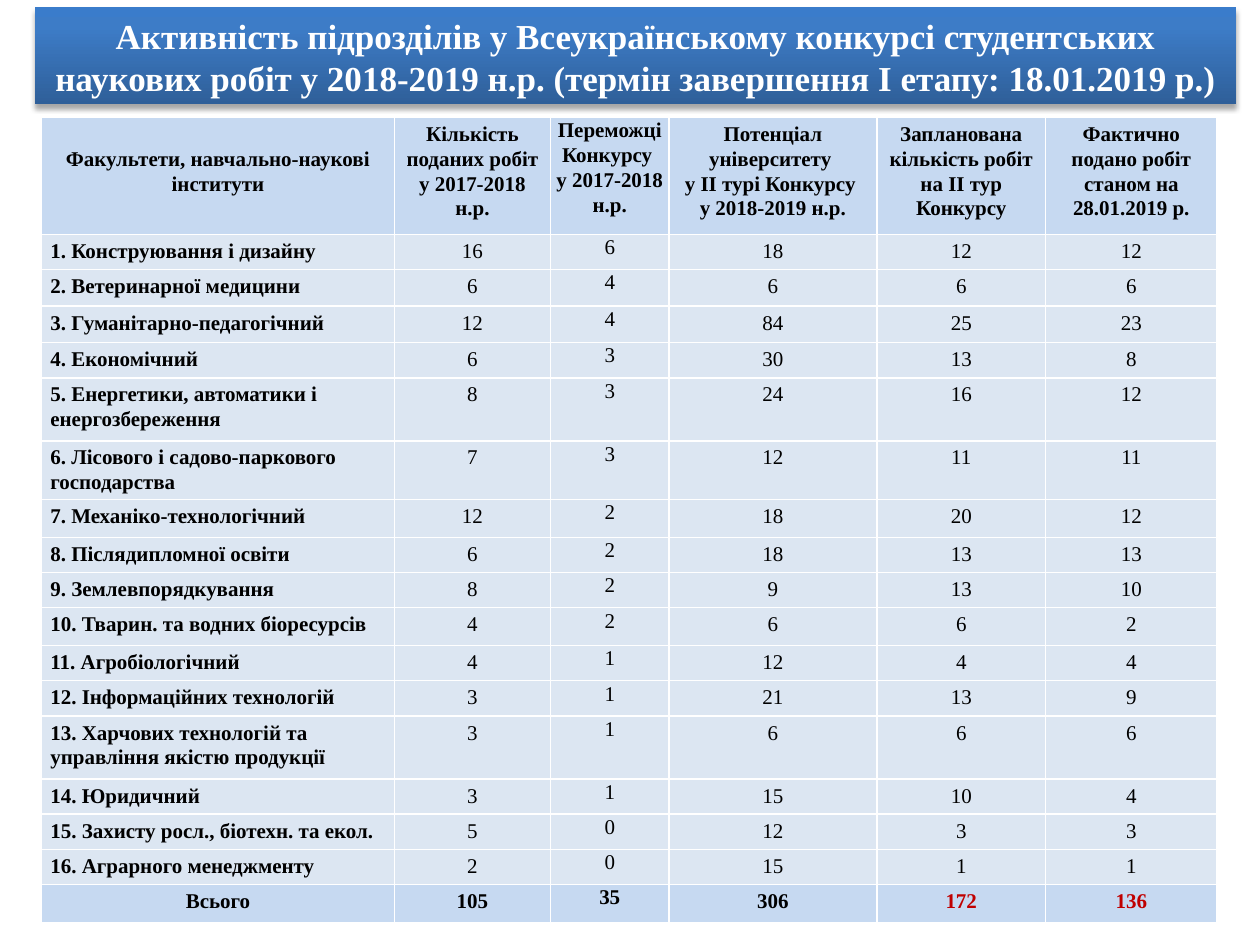
from dataclasses import dataclass
from lxml.etree import fromstring
from pptx import Presentation
from pptx.dml.color import RGBColor as RGB
from pptx.enum.shapes import MSO_SHAPE as Shape
from pptx.enum.text import MSO_ANCHOR as Anchor, MSO_AUTO_SIZE as Fit, PP_ALIGN as Align
from pptx.oxml.ns import nsdecls
from pptx.util import Inches, Pt


@dataclass(frozen=True)
class Theme:
    font: str = "Times New Roman"
    title: int = 20
    body: int = 12
    space: float = 1.07
    black: str = "000000"
    white: str = "FFFFFF"
    red: str = "C00000"
    head: str = "C6D9F1"
    row: str = "DCE6F2"
    stops: tuple = ((0, "2F5F99"), (80, "3D7CC7"), (100, "3A7CCB"))


THEME = Theme()
WIDE, HIGH = Inches(10), Inches(7.5)
TITLE = ("Активність підрозділів у Всеукраїнському конкурсі студентських наукових робіт "
         "у 2018-2019 н.р. (термін завершення І етапу: 18.01.2019 р.)")
HEADS = (
    "Факультети, навчально-наукові інститути",
    "Кількість поданих робіт\nу 2017-2018 н.р.",
    "Переможці Конкурсу \nу 2017-2018 н.р.",
    "Потенціал університету \nу ІІ турі Конкурсу \vу 2018-2019 н.р.",
    "Запланована кількість робіт на ІІ тур Конкурсу",
    "Фактично подано робіт станом на 28.01.2019 р.",
)
UNITS = (
    ("Конструювання і дизайну", 16, 6, 18, 12, 12),
    ("Ветеринарної медицини", 6, 4, 6, 6, 6),
    ("Гуманітарно-педагогічний", 12, 4, 84, 25, 23),
    ("Економічний", 6, 3, 30, 13, 8),
    ("Енергетики, автоматики і енергозбереження", 8, 3, 24, 16, 12),
    ("Лісового і садово-паркового господарства", 7, 3, 12, 11, 11),
    ("Механіко-технологічний", 12, 2, 18, 20, 12),
    ("Післядипломної освіти", 6, 2, 18, 13, 13),
    ("Землевпорядкування", 8, 2, 9, 13, 10),
    ("Тварин. та водних біоресурсів", 4, 2, 6, 6, 2),
    ("Агробіологічний", 4, 1, 12, 4, 4),
    ("Інформаційних технологій", 3, 1, 21, 13, 9),
    ("Харчових технологій та управління якістю продукції", 3, 1, 6, 6, 6),
    ("Юридичний", 3, 1, 15, 10, 4),
    ("Захисту росл., біотехн. та екол.", 5, 0, 12, 3, 3),
    ("Аграрного менеджменту", 2, 0, 15, 1, 1),
)
TOTAL = ("Всього", 105, 35, 306, 172, 136)
COLS = (28, 12.4, 9.4, 16.5, 13.4, 13.6)
ROWS = (12.4, 3.73, 3.87, 3.87, 3.73, 6.67, 3.73, 3.73, 4,
        3.73, 3.73, 4, 3.73, 3.73, 6.67, 3.73, 3.73, 3.73, 4)
SIDE, EDGE, LIFT = Inches(0.07), Inches(0.03), Inches(0.23)


def across(part):
    return int(WIDE * part / 100)


def down(part):
    return int(HIGH * part / 100)


def style(frame, size, color, bold, align, space=None):
    for para in frame.paragraphs:
        para.alignment = align
        para.line_spacing = space
        font = para.font
        font.name, font.size, font.bold = THEME.font, Pt(size), bold
        font.color.rgb = RGB.from_string(color)


def border(cell):
    props = cell._tc.get_or_add_tcPr()
    for spot, side in enumerate("LRTB"):
        props.insert(spot, fromstring(
            f'<a:ln{side} {nsdecls("a")} w="12700"><a:solidFill>'
            f'<a:srgbClr val="{THEME.white}"/></a:solidFill></a:ln{side}>'))


def fill_cell(cell, text, color, ink, bold, align, flush):
    cell.text_frame.text = str(text)
    style(cell.text_frame, THEME.body, ink, bold, align, THEME.space)
    cell.vertical_anchor = Anchor.TOP
    cell.margin_left = cell.margin_right = 0 if flush else SIDE
    cell.margin_top = cell.margin_bottom = 0 if flush else EDGE
    cell.fill.solid()
    cell.fill.fore_color.rgb = RGB.from_string(color)
    border(cell)


def add_grid(slide):
    named = [(f"{num}. {name}", *vals) for num, (name, *vals) in enumerate(UNITS, 1)]
    data = [HEADS, *named, TOTAL]
    last = len(data) - 1
    # row heights follow the number of text lines in the first column
    tall = {5, 6, 13}
    grid = slide.shapes.add_table(len(data), len(COLS), across(3.3), down(12.4),
                                  across(sum(COLS)), down(85.6)).table
    grid.first_row = grid.horz_banding = False
    for col, part in zip(grid.columns, COLS):
        col.width = across(part)
    for y, vals in enumerate(data):
        grid.rows[y].height = down(HEIGHTS[y])
        key = y in (0, last)
        for x, text in enumerate(vals):
            fill_cell(grid.cell(y, x), text,
                      THEME.head if key else THEME.row,
                      THEME.red if y == last and x > 3 else THEME.black,
                      key or x == 0,
                      Align.CENTER if key or x else Align.LEFT,
                      x == 2)
    grid.cell(0, 0).margin_top = LIFT


HEIGHTS = (12.4, 3.73, 3.87, 3.87, 3.73, 6.67, 6.2, 4, 3.73,
           3.73, 4, 3.73, 3.73, 6.67, 3.73, 3.73, 3.73, 4)


def add_title(slide):
    bar = slide.shapes.add_shape(Shape.RECTANGLE, across(2.8), down(0.8),
                                 across(95.3), down(10.27))
    bar.line.fill.background()
    stops = "".join(f'<a:gs pos="{at * 1000}"><a:srgbClr val="{color}"/></a:gs>'
                    for at, color in THEME.stops)
    props = bar._element.spPr
    props.insert(2, fromstring(
        f'<a:gradFill {nsdecls("a")} rotWithShape="1"><a:gsLst>{stops}</a:gsLst>'
        '<a:lin ang="16200000" scaled="0"/></a:gradFill>'))
    props.append(fromstring(
        f'<a:effectLst {nsdecls("a")}><a:outerShdw blurRad="40000" dist="23000" '
        f'dir="5400000" rotWithShape="0"><a:srgbClr val="{THEME.black}">'
        '<a:alpha val="35000"/></a:srgbClr></a:outerShdw></a:effectLst>'))
    frame = bar.text_frame
    frame.text = TITLE
    frame.word_wrap = True
    frame.auto_size = Fit.SHAPE_TO_FIT_TEXT
    style(frame, THEME.title, THEME.white, True, Align.CENTER)


def main():
    deck = Presentation()
    deck.slide_width, deck.slide_height = WIDE, HIGH
    slide = deck.slides.add_slide(deck.slide_layouts[6])
    add_grid(slide)
    add_title(slide)
    deck.save("out.pptx")


if __name__ == "__main__":
    main()
